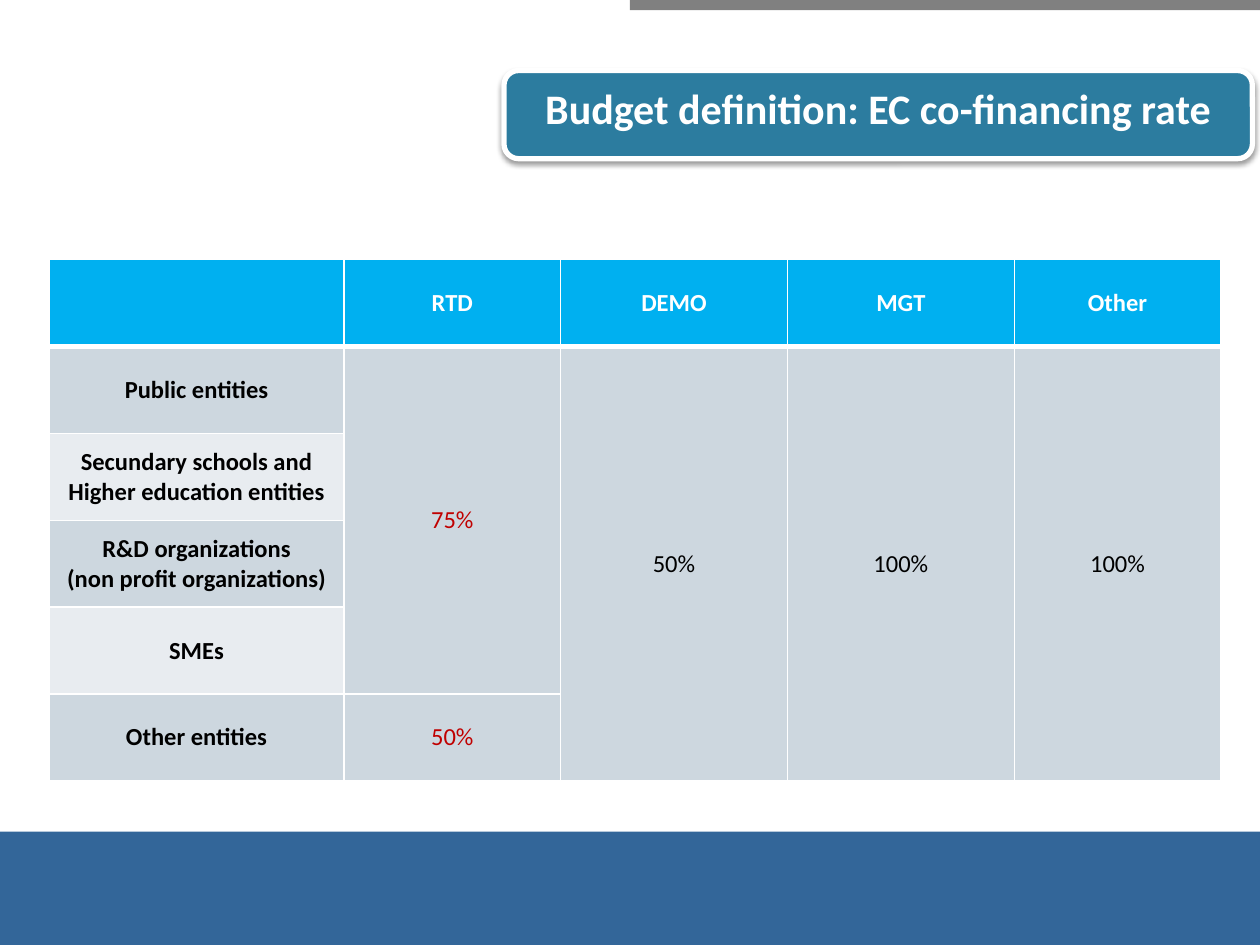
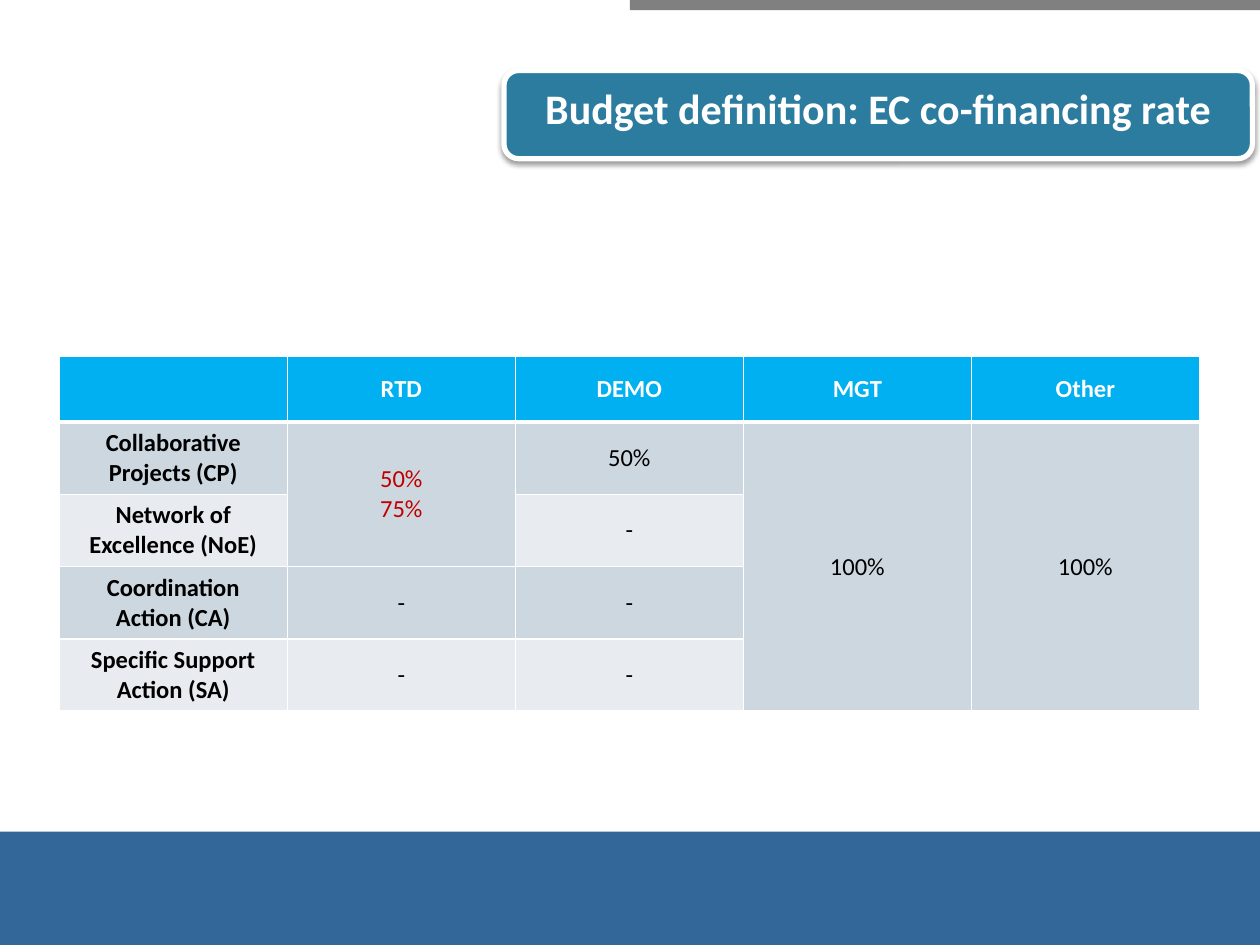
"""Build two slides of tables on the EC co-financing rate."""
from dataclasses import dataclass
from typing import Optional

import pptx
import pptx.dml.color
import pptx.enum.shapes
import pptx.enum.text
import pptx.oxml
import pptx.oxml.ns
import pptx.util
from pptx.util import Inches

Shape = pptx.enum.shapes.MSO_SHAPE
Align = pptx.enum.text.PP_ALIGN
Anchor = pptx.enum.text.MSO_ANCHOR


@dataclass(frozen=True)
class Theme:
    font: str = "Calibri"
    title: int = 24
    body: int = 14
    thin: int = 1
    thick: int = 3
    white: str = "FFFFFF"
    black: str = "000000"
    red: str = "C00000"
    gray: str = "808080"
    blue: str = "336699"
    teal: str = "2C7C9F"
    head: str = "00B0F0"
    dark: str = "CDD7DF"
    light: str = "E8ECF0"


@dataclass(frozen=True)
class Band:
    left: float
    top: float
    width: float
    height: float
    color: str


@dataclass(frozen=True)
class Grid:
    left: float
    top: float
    cols: list[float]
    rows: list[float]
    cells: list[list[Optional[str]]]


THEME = Theme()
TITLE = "Budget definition: EC co-financing rate"
BANDS = [Band(5, 0, 5, 0.08, THEME.gray), Band(0, 6.6, 10, 0.9, THEME.blue)]
HEADS = ["", "RTD", "DEMO", "MGT", "Other"]

GRIDS = [
    Grid(0.39, 2.06, [2.34, 1.72, 1.8, 1.8, 1.64], [0.69] * 6, [
        HEADS,
        ["Public entities", "75%", "50%", "100%", "100%"],
        ["Secundary schools and Higher education entities"] + [None] * 4,
        ["R&D organizations\n(non profit organizations)"] + [None] * 4,
        ["SMEs"] + [None] * 4,
        ["Other entities", "50%", None, None, None],
    ]),
    Grid(0.47, 2.83, [1.81] * 5, [0.52] + [0.57] * 4, [
        HEADS,
        ["Collaborative Projects (CP)", "50%\n75%", "50%", "100%", "100%"],
        ["Network of Excellence (NoE)", None, "-", None, None],
        ["Coordination Action (CA)", "-", "-", None, None],
        ["Specific Support Action (SA)", "-", "-", None, None],
    ]),
]


def rgb(color: str) -> pptx.dml.color.RGBColor:
    return pptx.dml.color.RGBColor.from_string(color)


def write(frame, text: str, size: int, color: str, bold: bool) -> None:
    for i, line in enumerate(text.split("\n")):
        para = frame.add_paragraph() if i else frame.paragraphs[0]
        para.alignment = Align.CENTER
        run = para.add_run()
        run.text = line
        run.font.name = THEME.font
        run.font.size = pptx.util.Pt(size)
        run.font.bold = bold
        run.font.color.rgb = rgb(color)


def block(slide, kind, band: Band):
    shape = slide.shapes.add_shape(
        kind, Inches(band.left), Inches(band.top),
        Inches(band.width), Inches(band.height))
    shape.shadow.inherit = False
    shape.fill.solid()
    shape.fill.fore_color.rgb = rgb(band.color)
    shape.line.fill.background()
    return shape


def shade(shape) -> None:
    effects = shape._element.spPr.find(pptx.oxml.ns.qn("a:effectLst"))
    blur, dist = pptx.util.Pt(3.1), pptx.util.Pt(1.6)
    effects.append(pptx.oxml.parse_xml(
        f'<a:outerShdw {pptx.oxml.ns.nsdecls("a")} blurRad="{blur}" '
        f'dist="{dist}" dir="5400000" rotWithShape="0">'
        f'<a:srgbClr val="{THEME.black}"><a:alpha val="38000"/></a:srgbClr>'
        '</a:outerShdw>'))


def banner(slide) -> None:
    shape = block(slide, Shape.ROUNDED_RECTANGLE,
                  Band(4, 0.56, 5.94, 0.7, THEME.teal))
    shape.line.color.rgb = rgb(THEME.white)
    shape.line.width = pptx.util.Pt(THEME.thick)
    shade(shape)
    frame = shape.text_frame
    frame.word_wrap = True
    frame.vertical_anchor = Anchor.TOP
    frame.margin_top = Inches(0.06)
    write(frame, TITLE, THEME.title, THEME.white, True)


def border(cell, row: int) -> None:
    top = THEME.thick if row == 1 else THEME.thin
    base = THEME.thick if row == 0 else THEME.thin
    sides = {"L": THEME.thin, "R": THEME.thin, "T": top, "B": base}
    props = cell._tc.get_or_add_tcPr()
    for i, (side, width) in enumerate(sides.items()):
        props.insert(i, pptx.oxml.parse_xml(
            f'<a:ln{side} {pptx.oxml.ns.nsdecls("a")} '
            f'w="{pptx.util.Pt(width)}"><a:solidFill>'
            f'<a:srgbClr val="{THEME.white}"/></a:solidFill></a:ln{side}>'))


def style(cell, text: Optional[str], row: int, col: int) -> None:
    cell.vertical_anchor = Anchor.MIDDLE
    cell.fill.solid()
    fill = THEME.dark if row % 2 else THEME.light
    cell.fill.fore_color.rgb = rgb(THEME.head if row == 0 else fill)
    border(cell, row)
    if text:
        color = THEME.black
        if row == 0:
            color = THEME.white
        elif col == 1 and "%" in text:
            color = THEME.red
        write(cell.text_frame, text, THEME.body, color, row == 0 or col == 0)


def merge(table, grid: Grid) -> None:
    for col in range(len(grid.cols)):
        start = 0
        for row in range(1, len(grid.rows) + 1):
            if row == len(grid.rows) or grid.cells[row][col] is not None:
                if row - start > 1:
                    table.cell(start, col).merge(table.cell(row - 1, col))
                start = row


def draw(slide, grid: Grid) -> None:
    table = slide.shapes.add_table(
        len(grid.rows), len(grid.cols), Inches(grid.left), Inches(grid.top),
        Inches(sum(grid.cols)), Inches(sum(grid.rows))).table
    for col, width in zip(table.columns, grid.cols):
        col.width = Inches(width)
    for row, height in zip(table.rows, grid.rows):
        row.height = Inches(height)
    for r, line in enumerate(grid.cells):
        for c, text in enumerate(line):
            style(table.cell(r, c), text, r, c)
    merge(table, grid)


def main() -> None:
    deck = pptx.Presentation()
    deck.slide_width, deck.slide_height = Inches(10), Inches(7.5)
    for grid in GRIDS:
        slide = deck.slides.add_slide(deck.slide_layouts[6])
        for band in BANDS:
            block(slide, Shape.RECTANGLE, band)
        draw(slide, grid)
        banner(slide)
    deck.save("out.pptx")


if __name__ == "__main__":
    main()
